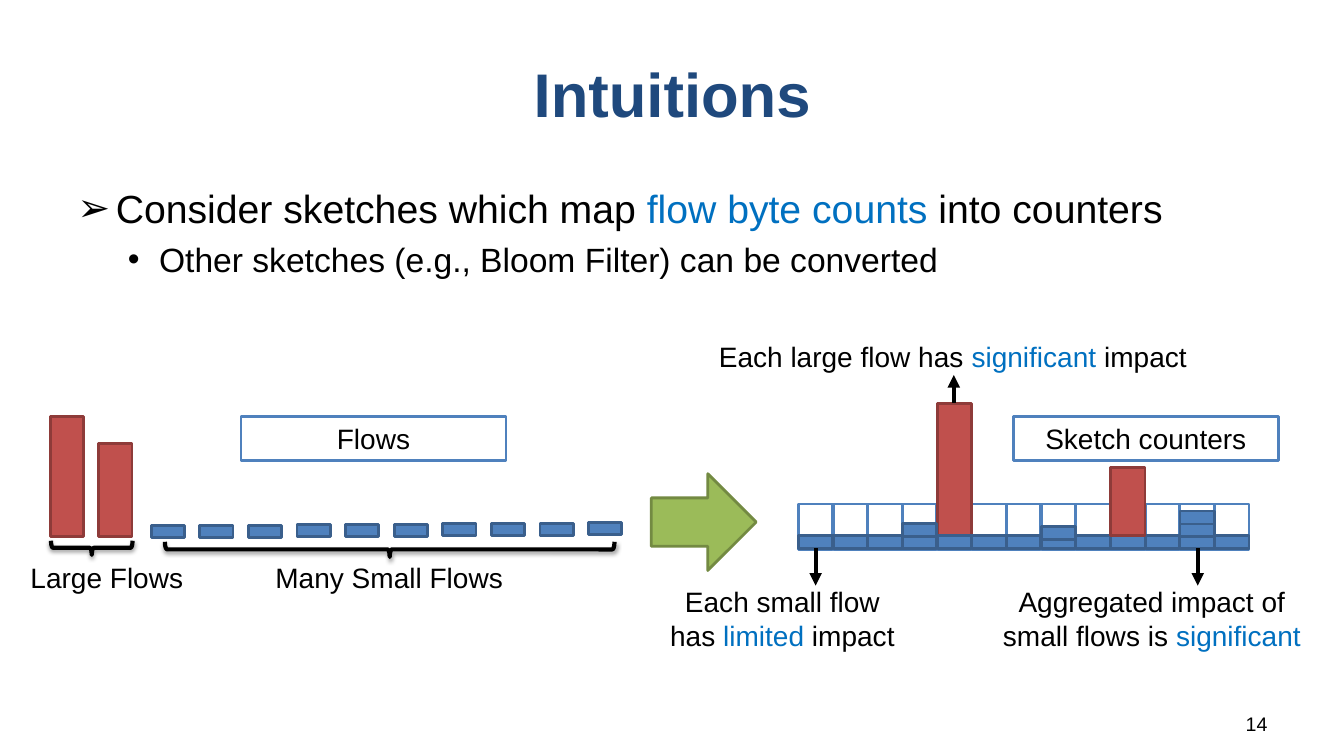
import pptx
import pptx.util
import pptx.dml.color
import pptx.enum.shapes
import pptx.enum.text
import pptx.oxml
import pptx.oxml.ns

PX = 9144
KIND = pptx.enum.shapes.MSO_SHAPE
ALIGN = pptx.enum.text.PP_ALIGN
ANCHOR = pptx.enum.text.MSO_ANCHOR
BLACK, WHITE, ACCENT, NAVY = "000000", "FFFFFF", "0070C0", "1F497D"
FRAME = (WHITE, "4F81BD")
LARGE = ("C0504D", "8E3B39")
SMALL = ("4F81BD", "3A5F8C")
GREEN = ("9BBB59", "738A42")


def px(n):
    """Turn px into EMU."""
    return pptx.util.Emu(round(n * PX))


def rgb(code):
    """Turn a hex string into a colour."""
    return pptx.dml.color.RGBColor.from_string(code)


def node(tag, home, **attrs):
    """Add a drawing element with attributes to its parent."""
    item = pptx.oxml.parse_xml(f"<a:{tag} {pptx.oxml.ns.nsdecls('a')}/>")
    for key, value in attrs.items():
        item.set(key, str(value))
    home.append(item)
    return item


def write(frame, text, size=20, color=BLACK, bold=False, align=ALIGN.CENTER,
          mark=None, left=0, hang=0, before=0, level=0):
    """Append lines of text, with parts between asterisks in the accent colour."""
    for line in text.split("\n"):
        para = frame.add_paragraph() if frame.text else frame.paragraphs[0]
        para.alignment, para.level = align, level
        para.space_before = pptx.util.Pt(before)
        if mark:
            props = para._p.get_or_add_pPr()
            props.set("marL", str(px(left)))
            props.set("indent", str(px(-hang)))
            node("buFont", props, typeface="Arial")
            node("buChar", props, char=mark)
        for i, part in enumerate(line.split("*")):
            if part:
                run = para.add_run()
                run.text = part
                font = run.font
                font.name, font.size, font.bold = "Arial", pptx.util.Pt(size), bold
                font.color.rgb = rgb(ACCENT if i % 2 else color)


def label(home, box, text="", anchor=ANCHOR.TOP, **look):
    """Add a wrapping text box and return its frame."""
    frame = home.add_textbox(*map(px, box)).text_frame
    frame.word_wrap = True
    frame.vertical_anchor = anchor
    if text:
        write(frame, text, **look)
    return frame


def block(home, box, paint, text="", kind=KIND.RECTANGLE):
    """Add a filled and outlined shape with optional text."""
    shape = home.add_shape(kind, *map(px, box))
    shape.shadow.inherit = False
    shape.fill.solid()
    shape.fill.fore_color.rgb = rgb(paint[0])
    shape.line.color.rgb = rgb(paint[1])
    shape.line.width = pptx.util.Pt(2)
    if text:
        shape.text_frame.vertical_anchor = ANCHOR.MIDDLE
        write(shape.text_frame, text)


def brace(home, box):
    """Add a brace that opens upward and casts a soft shadow."""
    shape = home.add_shape(KIND.RIGHT_BRACE, *map(px, box))
    shape.rotation = 90
    shape.adjustments[0] = 0.139
    shape.fill.background()
    shape.line.color.rgb = rgb(BLACK)
    shape.line.width = pptx.util.Pt(3)
    glow = node("outerShdw", node("effectLst", shape._element.spPr),
                blurRad=40000, dist=20000, dir=5400000, rotWithShape=0)
    node("alpha", node("srgbClr", glow, val=BLACK), val=38000)


def arrow(home, x, start, end):
    """Add an upright arrow."""
    line = home.add_connector(pptx.enum.shapes.MSO_CONNECTOR.STRAIGHT,
                              px(x), px(start), px(x), px(end))
    line.line.color.rgb = rgb(BLACK)
    line.line.width = pptx.util.Pt(3)
    node("tailEnd", line.line._get_or_add_ln(), type="triangle")
    node("effectLst", line._element.spPr)


def draw_flows(home):
    """Draw the large and small flows with their braces."""
    for x, top in ((50, 413), (98, 440)):
        block(home, (x, top, 33, 532 - top), LARGE)
    for i in range(10):
        block(home, (150 + 48.2 * i, 521 - i // 3, 33, 12), SMALL)
    brace(home, (84, 503, 14, 81))
    brace(home, (379, 322, 15, 446))
    label(home, (20, 551, 172, 44), "Large Flows")
    label(home, (260, 551, 252, 44), "Many Small Flows")


def draw_sketch(home):
    """Draw the row of counters and the flows stacked in them."""
    left, step, count = 792, 34.4, 13
    for i in range(count):
        block(home, (left + step * i, 500, 34, 45), FRAME)
    block(home, (left + step * 4, 400, 34, 132), LARGE)
    stacks = {3: (519,), 7: (522,), 11: (519, 507)}
    for i in range(count):
        for top in (531, *stacks.get(i, ())):
            block(home, (left + step * i, top, 34, 13), SMALL)
    block(home, (left + step * 9, 464, 34, 67), LARGE)


def main():
    """Build the slide and save it."""
    deck = pptx.Presentation()
    deck.slide_width, deck.slide_height = px(1333), px(750)
    shapes = deck.slides.add_slide(deck.slide_layouts[6]).shapes

    label(shapes, (67, 30, 1200, 125), "Intuitions", anchor=ANCHOR.MIDDLE,
          size=44, color=NAVY, bold=True)
    body = label(shapes, (67, 178, 1200, 492))
    write(body, "Consider sketches which map *flow byte counts* into counters",
          size=28, align=ALIGN.LEFT, mark="➢", left=38, hang=38)
    write(body, "Other sketches (e.g., Bloom Filter) can be converted",
          size=24, align=ALIGN.LEFT, mark="•", left=81, hang=31, before=5, level=1)
    label(shapes, (956, 700, 311, 35), "14", anchor=ANCHOR.MIDDLE,
          size=14, align=ALIGN.RIGHT)

    block(shapes, (646, 470, 104, 96), GREEN, kind=KIND.RIGHT_ARROW)
    draw_sketch(shapes.add_group_shape().shapes)
    draw_flows(shapes.add_group_shape().shapes)

    label(shapes, (694, 332, 502, 44), "Each large flow has *significant* impact")
    label(shapes, (974, 575, 337, 77), "Aggregated impact of small flows is *significant*")
    label(shapes, (594, 575, 364, 77), "Each small flow\nhas *limited* impact")
    for x, start, end in ((946, 400, 372), (809, 544, 581), (1188, 544, 581)):
        arrow(shapes, x, start, end)
    block(shapes, (1005, 413, 263, 44), FRAME, "Sketch counters")
    block(shapes, (239, 413, 263, 44), FRAME, "Flows")
    deck.save("out.pptx")


if __name__ == "__main__":
    main()
